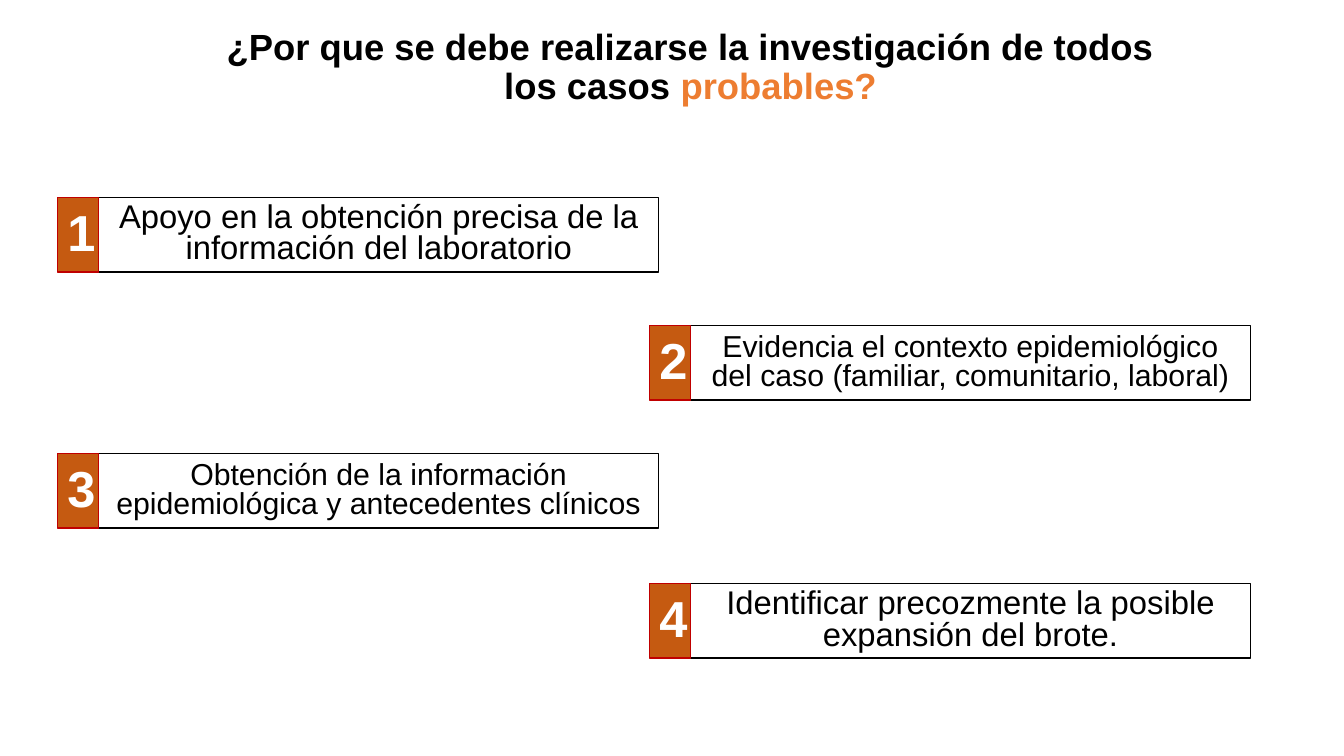
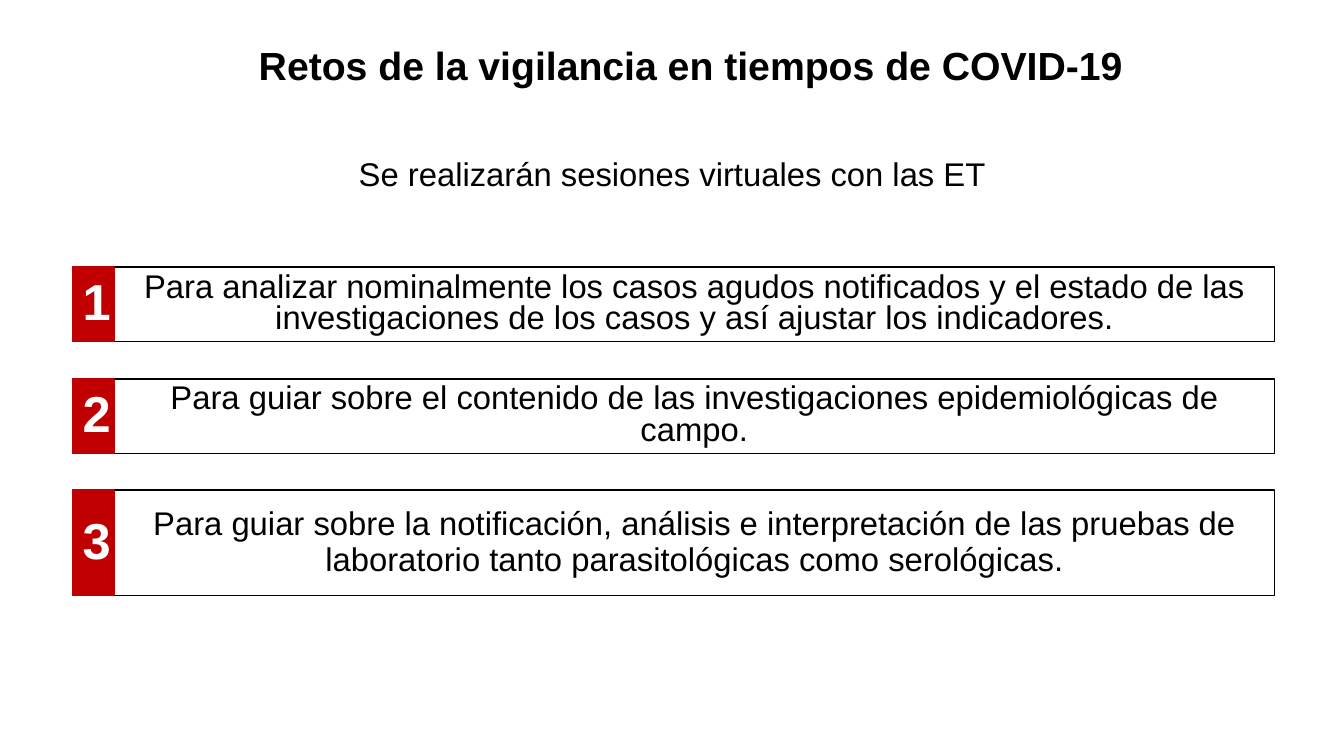
from pptx import Presentation
from pptx.dml.color import RGBColor
from pptx.enum import shapes, text
from pptx.util import Pt

PX = 9144  # 100 px to the inch
FONT = "Arial"
BLACK = RGBColor(0x00, 0x00, 0x00)
WHITE = RGBColor(0xFF, 0xFF, 0xFF)
ORANGE = RGBColor(0xED, 0x7D, 0x31)
RUST = RGBColor(0xC5, 0x5A, 0x11)
RED = RGBColor(0xC0, 0x00, 0x00)
NUMBER_WIDTH = 41
ROW_HEIGHT = 74


def add_block(slide, box, runs, size, spacing=0.9, bold=False, fill=None, line=None):
    """Add a rectangle with centred text; runs are (text, colour) pairs."""
    block = slide.shapes.add_shape(
        shapes.MSO_SHAPE.RECTANGLE, *(length * PX for length in box))
    block.shadow.inherit = False
    if fill is None:
        block.fill.background()
    else:
        block.fill.solid()
        block.fill.fore_color.rgb = fill
    if line is None:
        block.line.fill.background()
    else:
        block.line.color.rgb = line
        block.line.width = Pt(1)
    frame = block.text_frame
    frame.word_wrap = True
    frame.vertical_anchor = text.MSO_ANCHOR.MIDDLE
    paragraph = frame.paragraphs[0]
    paragraph.alignment = text.PP_ALIGN.CENTER
    paragraph.line_spacing = spacing
    for words, color in runs:
        run = paragraph.add_run()
        run.text = words
        run.font.name = FONT
        run.font.size = Pt(size)
        run.font.bold = bold
        run.font.color.rgb = color


def add_slide(title_runs, title_size, number_fill, width, rows):
    """Add a titled slide of numbered rows: (left, top, height, size, spacing, words)."""
    slide = deck.slides.add_slide(deck.slide_layouts[6])
    add_block(slide, (197, 18, 976, 99), title_runs, title_size, bold=True)
    for number, (left, top, height, size, spacing, words) in enumerate(rows, 1):
        add_block(slide, (left + NUMBER_WIDTH, top, width, height), [(words, BLACK)],
                  size, spacing, fill=WHITE, line=BLACK)
        add_block(slide, (left, top, NUMBER_WIDTH, height), [(str(number), WHITE)],
                  36.1, bold=True, fill=number_fill, line=RED)
    return slide


deck = Presentation()
deck.slide_width = 1333 * PX
deck.slide_height = 750 * PX

LEFT, RIGHT = 57, 644
add_slide(
    [("¿Por que se debe realizarse la investigación de todos los casos ", BLACK),
     ("probables?", ORANGE)],
    26, RUST, 555,
    [(LEFT, 196, ROW_HEIGHT, 23.4, 0.8,
      "Apoyo en la obtención precisa de la información del laboratorio"),
     (RIGHT, 323, ROW_HEIGHT, 21.6, 0.8,
      "Evidencia el contexto epidemiológico del caso (familiar, comunitario, laboral)"),
     (LEFT, 450, ROW_HEIGHT, 21.6, 0.8,
      "Obtención de la información epidemiológica y antecedentes clínicos"),
     (RIGHT, 579, ROW_HEIGHT, 23.4, 0.8,
      "Identificar precozmente la posible expansión del brote.")])

challenges = add_slide(
    [("Retos de la vigilancia en tiempos de COVID-19", BLACK)],
    28, RED, 1151,
    [(72, 265, ROW_HEIGHT, 23.4, 0.8,
      "Para analizar nominalmente los casos agudos notificados y el estado de las "
      "investigaciones de los casos y así ajustar los indicadores."),
     (72, 376, ROW_HEIGHT, 23.4, 0.8,
      "Para guiar sobre el contenido de las investigaciones epidemiológicas de campo."),
     (72, 486, 105, 23.4, 0.9,
      "Para guiar sobre la notificación, análisis e interpretación de las pruebas de "
      "laboratorio tanto parasitológicas como serológicas.")])
add_block(challenges, (91, 138, 1151, ROW_HEIGHT),
          [("Se realizarán sesiones virtuales con las ET", BLACK)], 23.4, fill=WHITE)

deck.save("out.pptx")
